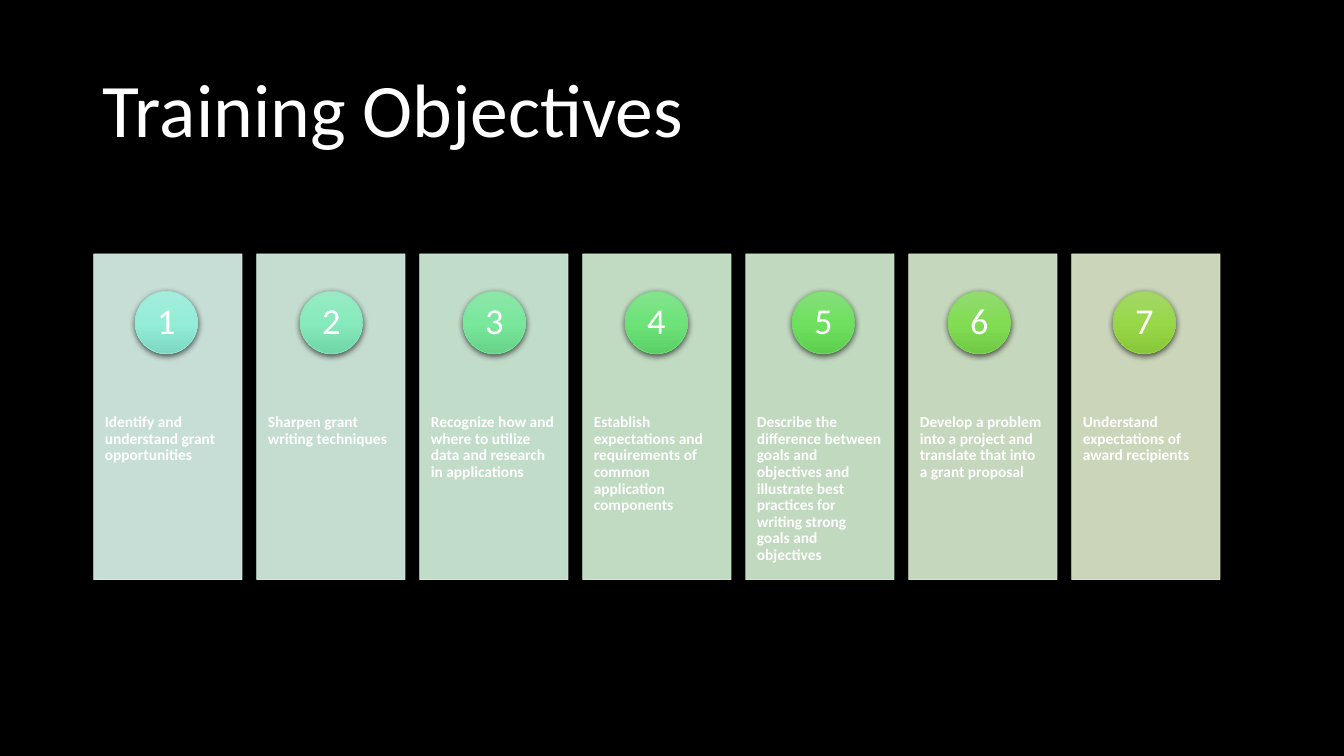
import pptx
import pptx.util
import pptx.dml.color
import pptx.enum.shapes
import pptx.enum.text
import pptx.oxml
import pptx.oxml.ns

Inches = pptx.util.Inches
RGBColor = pptx.dml.color.RGBColor
SHAPE = pptx.enum.shapes.MSO_SHAPE
ANCHOR = pptx.enum.text.MSO_ANCHOR
ALIGN = pptx.enum.text.PP_ALIGN
NS = pptx.oxml.ns.nsdecls("a")

BLACK = RGBColor(0x00, 0x00, 0x00)
WHITE = RGBColor(0xFF, 0xFF, 0xFF)
CARD_COLORS = [RGBColor(0xDD, 0xF7, 0xEF), RGBColor(0xDB, 0xF5, 0xE8),
               RGBColor(0xD8, 0xF4, 0xE0), RGBColor(0xD6, 0xF2, 0xD8),
               RGBColor(0xD7, 0xF1, 0xD4), RGBColor(0xDB, 0xEF, 0xD1),
               RGBColor(0xE0, 0xED, 0xCF)]
RING_COLORS = [RGBColor(0x97, 0xE9, 0xD5), RGBColor(0x8B, 0xE5, 0xBB),
               RGBColor(0x7E, 0xE2, 0x9E), RGBColor(0x72, 0xDE, 0x7D),
               RGBColor(0x74, 0xDA, 0x66), RGBColor(0x84, 0xD6, 0x5A),
               RGBColor(0x97, 0xD1, 0x4F)]
GRADIENTS = [
    (RGBColor(0xA4, 0xED, 0xDB), RGBColor(0x93, 0xED, 0xD7), RGBColor(0x7D, 0xD8, 0xC2)),
    (RGBColor(0x99, 0xEA, 0xC4), RGBColor(0x86, 0xEA, 0xBC), RGBColor(0x71, 0xD6, 0xA7)),
    (RGBColor(0x8E, 0xE6, 0xA9), RGBColor(0x79, 0xE7, 0x9C), RGBColor(0x66, 0xD3, 0x89)),
    (RGBColor(0x84, 0xE3, 0x8D), RGBColor(0x6D, 0xE3, 0x79), RGBColor(0x5A, 0xD0, 0x66)),
    (RGBColor(0x85, 0xDF, 0x7A), RGBColor(0x6F, 0xE0, 0x60), RGBColor(0x5E, 0xCE, 0x4F)),
    (RGBColor(0x92, 0xDB, 0x71), RGBColor(0x82, 0xDC, 0x54), RGBColor(0x71, 0xCA, 0x44)),
    (RGBColor(0xA3, 0xD7, 0x68), RGBColor(0x98, 0xD8, 0x48), RGBColor(0x88, 0xC7, 0x39)),
]
OBJECTIVES = [
    "Identify and understand grant opportunities",
    "Sharpen grant writing techniques",
    "Recognize how and where to utilize data and research in applications",
    "Establish expectations and requirements of common application components",
    "Describe the difference between goals and objectives and illustrate best "
    "practices for writing strong goals and objectives",
    "Develop a problem into a project and translate that into a grant proposal",
    "Understand expectations of award recipients",
]
LEFT, TOP, CARD_W, CARD_H = 0.93, 2.52, 1.47, 3.23
PITCH = (10.63 - LEFT) / (len(OBJECTIVES) - 1)
CIRCLE, NUMBER = 0.62, 0.44
CIRCLE_OFFSETS = [0.41, 0.43, 0.43, 0.42, 0.46, 0.39, 0.41]


def write(sp, text, size, bold=False, align=ALIGN.LEFT, anchor=ANCHOR.TOP, inset=(0.1, 0.05)):
    tf = sp.text_frame
    tf.word_wrap = True
    tf.auto_size = pptx.enum.text.MSO_AUTO_SIZE.NONE
    tf.vertical_anchor = anchor
    tf.margin_left = tf.margin_right = Inches(inset[0])
    tf.margin_top = tf.margin_bottom = Inches(inset[1])
    p = tf.paragraphs[0]
    p.alignment = align
    p.line_spacing = 0.9
    r = p.add_run()
    r.text = text
    r.font.name = "Calibri"
    r.font.size = pptx.util.Pt(size)
    r.font.bold = bold
    r.font.color.rgb = WHITE


def add_outlined(s, kind, box, fill, line):
    sp = s.shapes.add_shape(kind, *[Inches(v) for v in box])
    sp.shadow.inherit = False
    sp.fill.solid()
    sp.fill.fore_color.rgb = fill
    sp.line.color.rgb = line
    sp.line.width = pptx.util.Pt(0.5)
    return sp


prs = pptx.Presentation()
prs.slide_width, prs.slide_height = Inches(13.33), Inches(7.5)
s = prs.slides.add_slide(prs.slide_layouts[5])
s.background.fill.solid()
s.background.fill.fore_color.rgb = BLACK

title = s.shapes.title
title.left, title.top = Inches(0.92), Inches(0.4)
title.width, title.height = Inches(11.5), Inches(1.45)
write(title, "Training Objectives", 54, anchor=ANCHOR.MIDDLE)

columns = zip(OBJECTIVES, CARD_COLORS, RING_COLORS, GRADIENTS, CIRCLE_OFFSETS)
for i, (objective, card_color, ring_color, stops, offset) in enumerate(columns):
    x = LEFT + i * PITCH
    card = add_outlined(s, SHAPE.RECTANGLE, (x, TOP, CARD_W, CARD_H), card_color, card_color)
    for color in card.element.spPr.iter(pptx.oxml.ns.qn("a:srgbClr")):
        color.append(pptx.oxml.parse_xml(f'<a:alpha {NS} val="90000"/>'))

    label = s.shapes.add_textbox(Inches(x), Inches(3.75), Inches(CARD_W), Inches(1.94))
    write(label, objective, 11, bold=True, inset=(0.11, 0.36))

    cx, cy = x + offset, 2.89
    circle = add_outlined(s, SHAPE.OVAL, (cx, cy, CIRCLE, CIRCLE), stops[1], ring_color)
    spPr = circle.element.spPr
    gs = "".join(f'<a:gs pos="{k * 50000}"><a:srgbClr val="{c}"/></a:gs>'
                 for k, c in enumerate(stops))
    spPr.replace(spPr.find(pptx.oxml.ns.qn("a:solidFill")), pptx.oxml.parse_xml(
        f'<a:gradFill {NS} rotWithShape="1"><a:gsLst>{gs}</a:gsLst>'
        '<a:lin ang="5400000" scaled="0"/></a:gradFill>'))
    spPr.find(pptx.oxml.ns.qn("a:effectLst")).append(pptx.oxml.parse_xml(
        f'<a:outerShdw {NS} blurRad="57150" dist="19050" dir="5400000" algn="ctr" '
        f'rotWithShape="0"><a:srgbClr val="{BLACK}"><a:alpha val="63000"/></a:srgbClr>'
        '</a:outerShdw>'))

    inner = (CIRCLE - NUMBER) / 2
    number = s.shapes.add_textbox(Inches(cx + inner), Inches(cy + inner),
                                  Inches(NUMBER), Inches(NUMBER))
    write(number, str(i + 1), 26, align=ALIGN.CENTER, anchor=ANCHOR.MIDDLE, inset=(0.05, 0.01))

prs.save("out.pptx")
